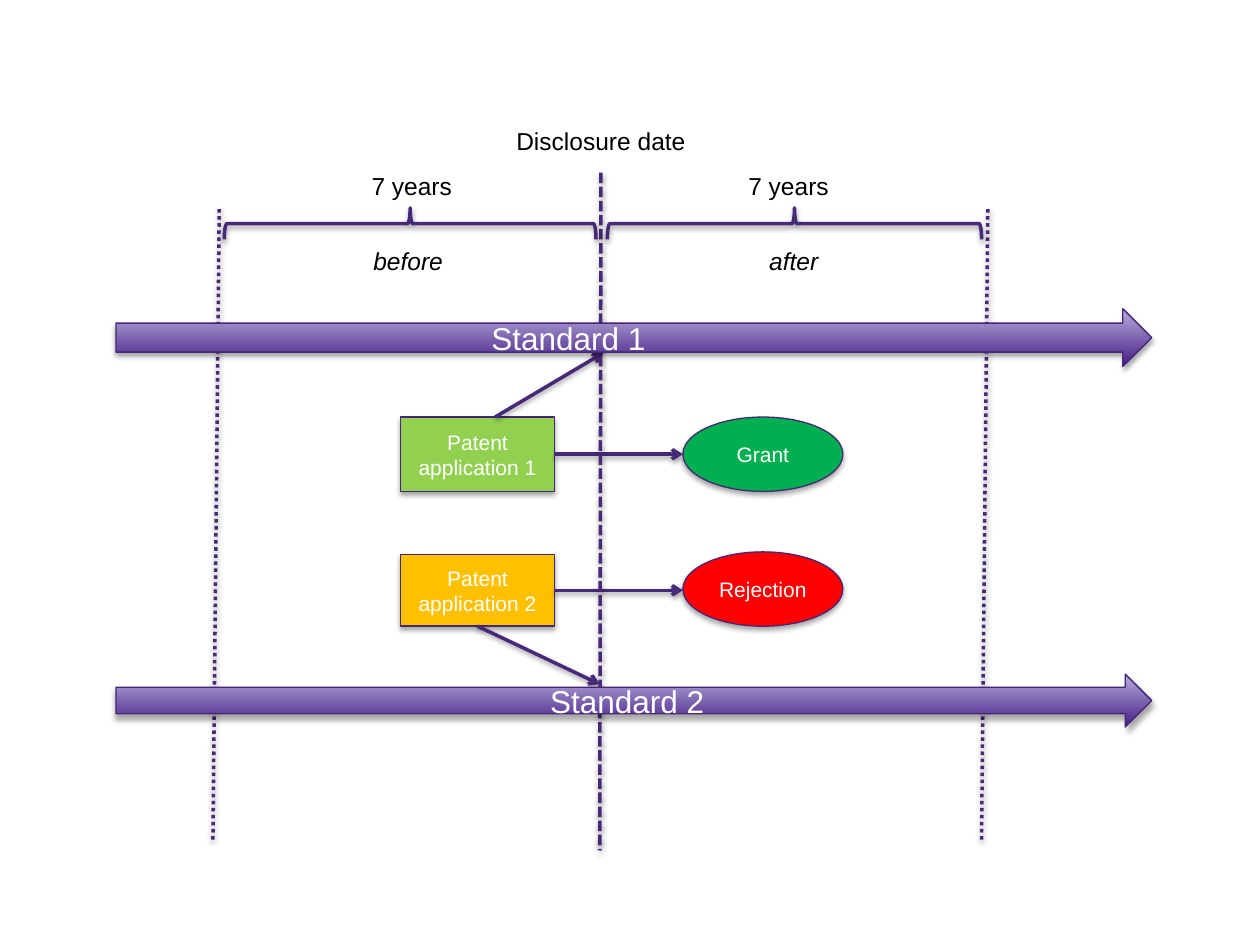
from lxml import etree
from pptx import Presentation, util as u
from pptx.dml.color import RGBColor as Rgb
from pptx.enum import dml, shapes as s, text as t
from pptx.oxml import ns

theme = {
    "font": "Arial", "box": 12, "label": 14, "band": 18,
    "black": "000000", "white": "FFFFFF",
    "edge": "452678", "line": "472979", "dark": "441D85", "light": "B8AEDB",
    "lime": "92D050", "amber": "FFC000", "green": "00B050", "red": "FF0000",
}


def write(shape, words, size="box", color="white", align=t.PP_ALIGN.CENTER,
          anchor=t.MSO_ANCHOR.MIDDLE, italic=False):
    frame = shape.text_frame
    frame.word_wrap = True
    frame.vertical_anchor = anchor
    para = frame.paragraphs[0]
    para.alignment = align
    run = para.add_run()
    run.text = words
    run.font.name = theme["font"]
    run.font.size = u.Pt(theme[size])
    run.font.italic = italic
    run.font.color.rgb = Rgb.from_string(theme[color])


def style(shape, color="line", width=2, alpha=38, drop=1.6, dash=None, head=False):
    line = shape.line
    line.color.rgb = Rgb.from_string(theme[color])
    line.width = u.Pt(width)
    if dash:
        line.dash_style = dash
    props = shape.element.spPr
    if head:
        etree.SubElement(props.find(ns.qn("a:ln")), ns.qn("a:tailEnd"), type="arrow")
    effects = etree.SubElement(props, ns.qn("a:effectLst"))
    shadow = etree.SubElement(
        effects, ns.qn("a:outerShdw"), blurRad=str(u.Pt(3.1)), dist=str(u.Pt(drop)),
        dir="5400000", algn="t", rotWithShape="0")
    tint = etree.SubElement(shadow, ns.qn("a:srgbClr"), val=theme["black"])
    etree.SubElement(tint, ns.qn("a:alpha"), val=str(alpha * 1000))


deck = Presentation()
deck.slide_width, deck.slide_height = u.Inches(10), u.Inches(7.5)
slide = deck.slides.add_slide(deck.slide_layouts[6])
items = slide.shapes
kinds = s.MSO_SHAPE

nodes = {}
for words, kind, x, y, w, h, fill in [
    ("Patent application 1", kinds.RECTANGLE, 3.18, 3.31, 1.22, 0.59, "lime"),
    ("Patent application 2", kinds.RECTANGLE, 3.18, 4.4, 1.22, 0.57, "amber"),
    ("Grant", kinds.OVAL, 5.42, 3.31, 1.27, 0.59, "green"),
    ("Rejection", kinds.OVAL, 5.42, 4.38, 1.27, 0.59, "red"),
]:
    node = items.add_shape(kind, u.Inches(x), u.Inches(y), u.Inches(w), u.Inches(h))
    node.fill.solid()
    node.fill.fore_color.rgb = Rgb.from_string(theme[fill])
    style(node, "edge", 0.75, 35, 1.8)
    frame = node.text_frame
    frame.margin_left = frame.margin_right = 0
    write(node, words)
    nodes[words] = node

dashes = dml.MSO_LINE
first, second = nodes["Patent application 1"], nodes["Patent application 2"]
mids = [(box.top + box.height // 2) / u.Inches(1) for box in (first, second)]
for x1, y1, x2, y2, box, site, dash in [
    (3.93, 3.31, 4.79, 2.8, None, None, None),
    (3.79, 4.97, 4.76, 5.43, second, 2, None),
    (4.4, mids[0], 5.42, mids[0], first, 3, None),
    (4.4, mids[1], 5.42, mids[1], second, 3, None),
    (4.77, 1.37, 4.76, 6.75, None, None, dashes.SQUARE_DOT),
    (1.74, 1.66, 1.69, 6.68, None, None, dashes.ROUND_DOT),
    (7.84, 1.66, 7.79, 6.68, None, None, dashes.ROUND_DOT),
]:
    link = items.add_connector(
        s.MSO_CONNECTOR.STRAIGHT, u.Inches(x1), u.Inches(y1), u.Inches(x2), u.Inches(y2))
    if box:
        link.begin_connect(box, site)
    if dash == dashes.SQUARE_DOT:
        style(link, dash=dashes.SQUARE_DOT)
        link.line.dash_style = dash
    else:
        style(link, dash=dash, head=dash is None)

for words, y, h, pad in [("Standard 1", 2.45, 0.46, 1.02), ("Standard 2", 5.35, 0.42, 0.1)]:
    band = items.add_shape(
        kinds.RIGHT_ARROW, u.Inches(0.92), u.Inches(y), u.Inches(8.22), u.Inches(h))
    band.fill.gradient()
    band.fill.gradient_angle = 90
    for stop, color in zip(band.fill.gradient_stops, ("dark", "light")):
        stop.color.rgb = Rgb.from_string(theme[color])
    style(band, "edge", 0.75, 35, 1.8)
    band.text_frame.margin_right = u.Inches(pad)
    write(band, words, "band")

for x, y, h in [(3.13, 0.3, 2.95), (6.18, 0.29, 2.97)]:
    brace = items.add_shape(
        kinds.LEFT_BRACE, u.Inches(x), u.Inches(y), u.Inches(0.25), u.Inches(h))
    brace.rotation = 90
    brace.fill.background()
    style(brace)

left, mid = t.PP_ALIGN.LEFT, t.PP_ALIGN.CENTER
top, center = t.MSO_ANCHOR.TOP, t.MSO_ANCHOR.MIDDLE
for words, x, y, w, h, align, anchor, italic in [
    ("Disclosure date", 3.92, 0.87, 1.7, 0.5, mid, center, False),
    ("7 years", 2.85, 1.31, 1.41, 0.34, left, top, False),
    ("7 years", 5.84, 1.31, 1.41, 0.34, left, top, False),
    ("before", 2.16, 1.9, 2.16, 0.34, mid, top, True),
    ("after", 5.22, 1.9, 2.16, 0.34, mid, top, True),
]:
    label = items.add_textbox(u.Inches(x), u.Inches(y), u.Inches(w), u.Inches(h))
    write(label, words, "label", "black", align, anchor, italic)

deck.save("out.pptx")
